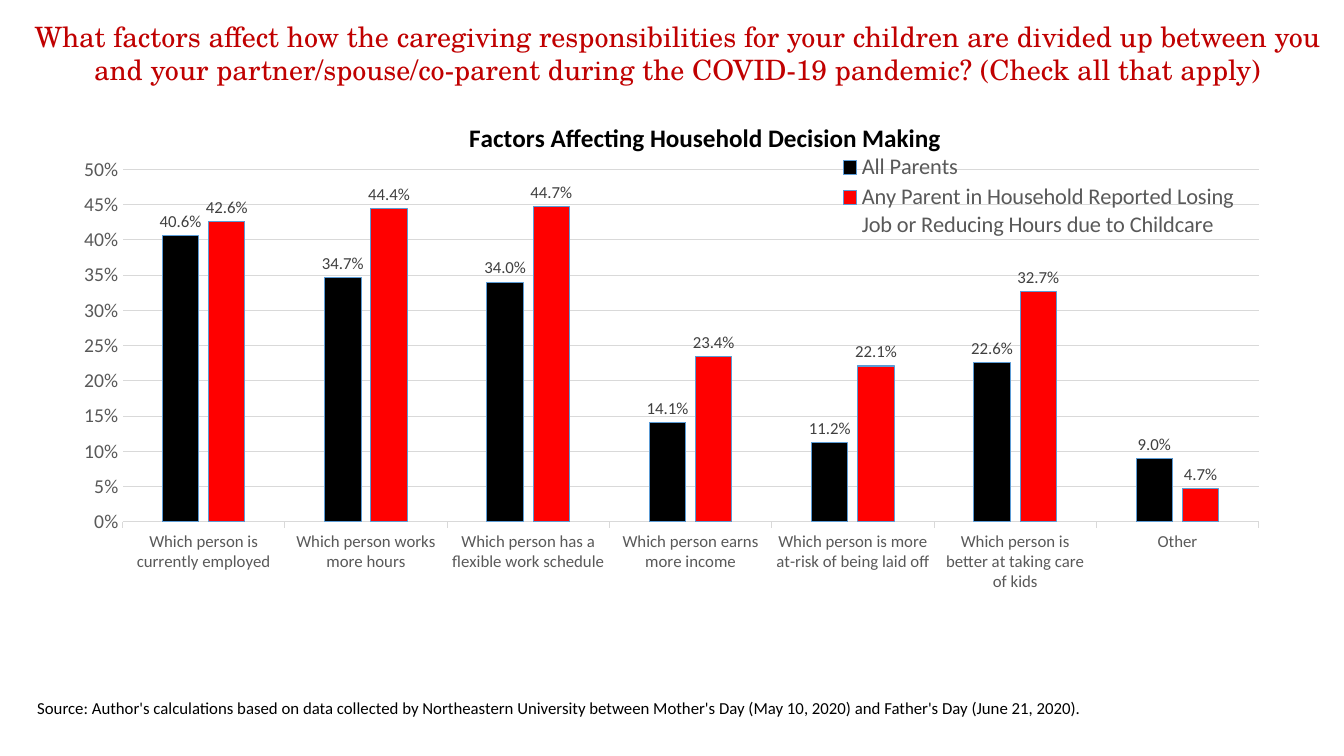
from dataclasses import dataclass

from lxml.etree import SubElement
from pptx import Presentation
from pptx.chart.chart import Chart
from pptx.chart.data import CategoryChartData
from pptx.dml.color import RGBColor
from pptx.dml.line import LineFormat
from pptx.enum.chart import XL_CHART_TYPE, XL_LABEL_POSITION, XL_LEGEND_POSITION, XL_TICK_MARK
from pptx.enum.text import PP_ALIGN
from pptx.oxml.ns import qn
from pptx.slide import Slide
from pptx.text.text import Font
from pptx.util import Pt

BLACK = RGBColor(0x00, 0x00, 0x00)
RED = RGBColor(0xFF, 0x00, 0x00)
CRIMSON = RGBColor(0xC0, 0x00, 0x00)
BLUE = RGBColor(0x5B, 0x9B, 0xD5)
GREY = RGBColor(0x59, 0x59, 0x59)
DARK = RGBColor(0x40, 0x40, 0x40)
PALE = RGBColor(0xD9, 0xD9, 0xD9)


@dataclass
class Note:
    text: str
    box: tuple[float, float, float, float]
    size: float
    face: str
    color: RGBColor
    align: PP_ALIGN


@dataclass
class Group:
    name: str
    rates: tuple[float, ...]
    color: RGBColor


NOTES = [
    Note("What factors affect how the caregiving responsibilities for your children are divided up "
         "between you and your partner/spouse/co-parent during the COVID-19 pandemic? "
         "(Check all that apply)",
         (8.64, 10.08, 951.12, 55.44), 20, "TeX Gyre Schola", CRIMSON, PP_ALIGN.CENTER),
    Note("Source: Author's calculations based on data collected by Northeastern University between "
         "Mother's Day (May 10, 2020) and Father's Day (June 21, 2020).",
         (19.44, 494.64, 920.16, 21.6), 12, "Calibri", BLACK, PP_ALIGN.LEFT),
]
FACTORS = [
    "Which person is currently employed",
    "Which person works more hours",
    "Which person has a flexible work schedule",
    "Which person earns more income",
    "Which person is more at-risk of being laid off",
    "Which person is better at taking care of kids",
    "Other",
]
GROUPS = [
    Group("All Parents", (0.406, 0.347, 0.34, 0.141, 0.112, 0.226, 0.09), BLACK),
    Group("Any Parent in Household Reported Losing Job or Reducing Hours due to Childcare",
          (0.426, 0.444, 0.447, 0.234, 0.221, 0.327, 0.047), RED),
]
SCALE = {
    "minimum_scale": 0, "maximum_scale": 0.5, "major_unit": 0.05,
    "has_major_gridlines": True, "major_tick_mark": XL_TICK_MARK.NONE,
}
LABELS = {
    "show_value": True, "number_format": "0.0%", "number_format_is_linked": False,
    "position": XL_LABEL_POSITION.OUTSIDE_END,
}


def assign(item: object, form: dict) -> None:
    for key, value in form.items():
        setattr(item, key, value)


def style(font: Font, size: float, color: RGBColor, face: str = "Calibri", bold: bool = False) -> None:
    assign(font, {"size": Pt(size), "name": face, "bold": bold})
    font.color.rgb = color


def stroke(line: LineFormat, color: RGBColor) -> None:
    line.color.rgb = color
    line.width = Pt(0.75)


def place(parent, index: int, **spots: float) -> None:
    """Give a chart part a manual layout in fractions of the chart."""
    for old in parent.findall(qn("c:layout")):
        parent.remove(old)
    layout = SubElement(parent, qn("c:layout"))
    parent.insert(index, layout)
    manual = SubElement(layout, qn("c:manualLayout"))
    if parent.tag == qn("c:plotArea"):
        SubElement(manual, qn("c:layoutTarget")).set("val", "inner")
    for key in ("x", "y"):
        SubElement(manual, qn(f"c:{key}Mode")).set("val", "edge")
    for key, value in spots.items():
        SubElement(manual, qn(f"c:{key}")).set("val", str(value))


def write(slide: Slide, note: Note) -> None:
    frame = slide.shapes.add_textbox(*map(Pt, note.box)).text_frame
    frame.word_wrap = True
    par = frame.paragraphs[0]
    par.alignment = note.align
    run = par.add_run()
    run.text = note.text
    style(run.font, note.size, note.color, note.face)


def plot(slide: Slide) -> Chart:
    data = CategoryChartData(number_format="0.0%")
    data.categories = FACTORS
    for group in GROUPS:
        data.add_series(group.name, group.rates)
    box = map(Pt, (43.92, 56.88, 872.64, 426.96))
    chart = slide.shapes.add_chart(XL_CHART_TYPE.COLUMN_CLUSTERED, *box, data).chart
    style(chart.font, 10, BLACK)
    bars = chart.plots[0]
    assign(bars, {"gap_width": 219, "overlap": -27, "vary_by_categories": False})
    for series, group in zip(bars.series, GROUPS):
        series.format.fill.solid()
        series.format.fill.fore_color.rgb = group.color
        stroke(series.format.line, BLUE)
        assign(series.data_labels, LABELS)
        style(series.data_labels.font, 12, DARK)
    place(chart.element.find(".//" + qn("c:plotArea")), 0, x=0.05, y=0.15, w=0.93, h=0.59)
    return chart


def dress(chart: Chart) -> None:
    """Format the axes, title and legend."""
    rates, factors = chart.value_axis, chart.category_axis
    assign(rates, SCALE)
    assign(rates.tick_labels, {"number_format": "0%", "number_format_is_linked": False})
    style(rates.tick_labels.font, 14, GREY)
    rates.format.line.fill.background()
    stroke(rates.major_gridlines.format.line, PALE)
    factors.major_tick_mark = XL_TICK_MARK.OUTSIDE
    style(factors.tick_labels.font, 12, GREY)
    stroke(factors.format.line, PALE)

    chart.has_title = True
    title = chart.chart_title
    title.text_frame.text = "Factors Affecting Household Decision Making"
    style(title.text_frame.paragraphs[0].runs[0].font, 18, BLACK, bold=True)
    place(title._element, 1, x=0.33, y=0.06)

    chart.has_legend = True
    assign(chart.legend, {"position": XL_LEGEND_POSITION.BOTTOM, "include_in_layout": False})
    style(chart.legend.font, 16, GREY)
    place(chart.legend._element, 1, x=0.63, y=0.12, w=0.34, h=0.15)


def main() -> None:
    deck = Presentation()
    assign(deck, {"slide_width": Pt(960), "slide_height": Pt(540)})
    slide = deck.slides.add_slide(deck.slide_layouts[6])
    dress(plot(slide))
    for note in NOTES:
        write(slide, note)
    deck.save("out.pptx")


if __name__ == "__main__":
    main()
